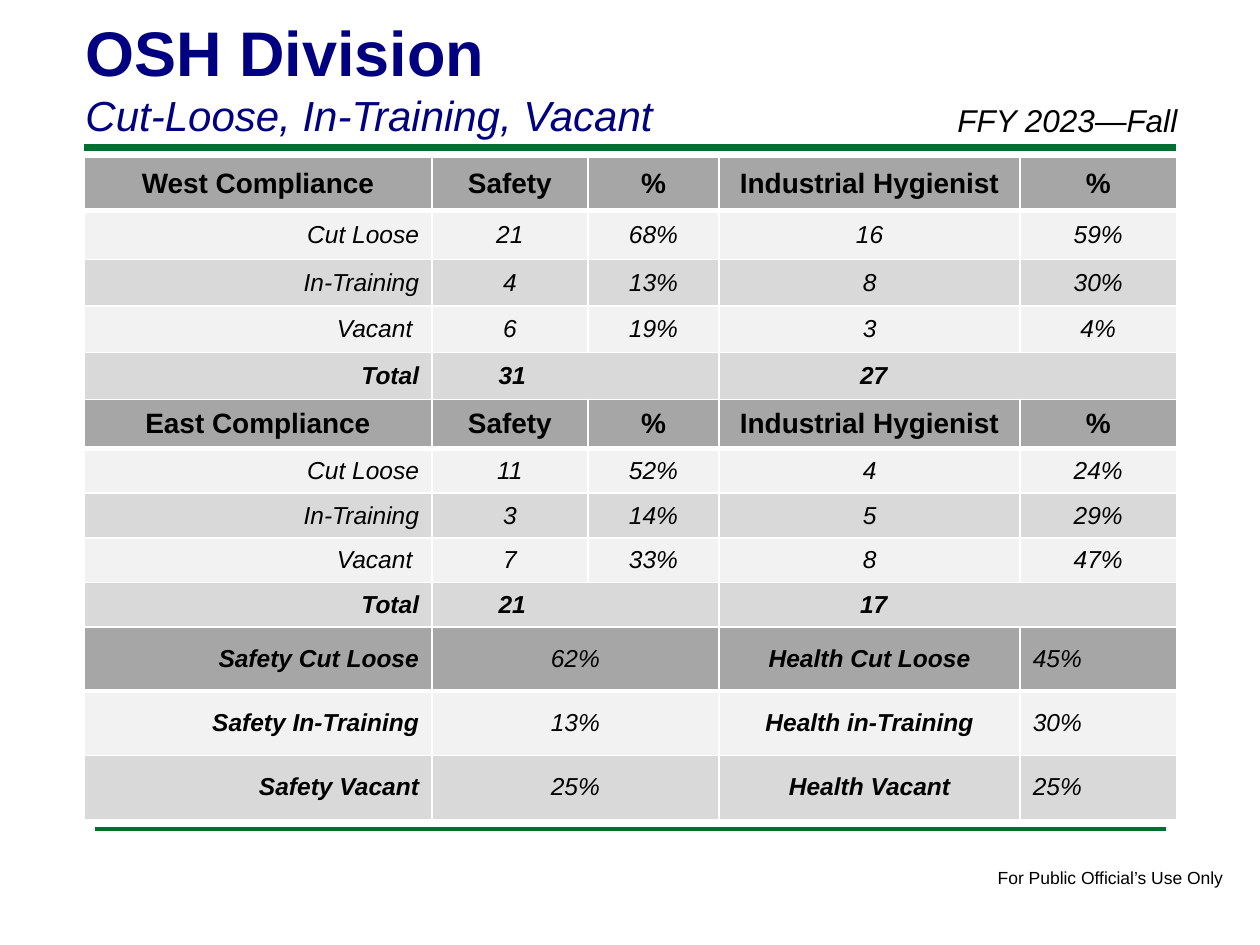
"""Build the OSH Division staffing slide with its three tables."""
import dataclasses

import pptx
import pptx.dml.color
import pptx.enum.shapes
import pptx.enum.text
import pptx.oxml
import pptx.oxml.ns
import pptx.util

ALIGN = pptx.enum.text.PP_ALIGN


@dataclasses.dataclass(frozen=True)
class Theme:
    """Colours, font and type sizes of the slide."""
    font: str = "Arial"
    navy: str = "000080"
    green: str = "007030"
    ink: str = "000000"
    border: str = "FFFFFF"
    header: str = "A6A6A6"
    bands: tuple = ("F2F2F2", "D9D9D9")
    title: int = 36
    subtitle: int = 24
    period: int = 18
    heading: int = 16
    body: int = 14
    footer: int = 10


THEME = Theme()
WIDTH = pptx.util.Inches(10)
HEIGHT = pptx.util.Inches(7.5)
LEFT = 6.67
COLUMNS = (27.6, 12.4, 10.4, 23.9, 12.4)
SUMMARY_COLUMNS = (27.6, 22.8, 23.9, 12.4)
HEADINGS = ("Safety", "%", "Industrial Hygienist", "%")
STATUSES = ("Cut Loose", "In-Training", "Vacant ")
TOTAL_INSETS = {1: 5.3, 3: 11.2}
WEST = (("21", "68%", "16", "59%"), ("4", "13%", "8", "30%"), ("6", "19%", "3", "4%"))
EAST = (("11", "52%", "4", "24%"), ("3", "14%", "5", "29%"), ("7", "33%", "8", "47%"))
SUMMARY = (
    ("Safety Cut Loose", "62%", "Health Cut Loose", "45%"),
    ("Safety In-Training", "13%", "Health in-Training", "30%"),
    ("Safety Vacant", "25%", "Health Vacant", "25%"),
)


def across(percent):
    """Return a share of the slide's width."""
    return round(WIDTH * percent / 100)


def down(percent):
    """Return a share of the slide's height."""
    return round(HEIGHT * percent / 100)


def rgb(color):
    """Return a colour object for a hex string."""
    return pptx.dml.color.RGBColor.from_string(color)


def write(p, text, size, color=THEME.ink, bold=False, italic=False, align=ALIGN.LEFT):
    """Fill a paragraph and set its font."""
    p.text = text
    p.alignment = align
    p.font.name = THEME.font
    p.font.size = pptx.util.Pt(size)
    p.font.bold = bold
    p.font.italic = italic
    p.font.color.rgb = rgb(color)


def add_rule(s, left, right, top, weight):
    """Add a horizontal green rule."""
    line = s.shapes.add_connector(pptx.enum.shapes.MSO_CONNECTOR.STRAIGHT,
                                  across(left), down(top), across(right), down(top))
    line.line.color.rgb = rgb(THEME.green)
    line.line.width = pptx.util.Pt(weight)
    line._element.spPr.append(pptx.oxml.parse_xml(
        f'<a:effectLst {pptx.oxml.ns.nsdecls("a")}/>'))


def add_text(s, left, top, width, height, wrap=True):
    """Add a text box and return its text frame."""
    sp = s.shapes.add_textbox(across(left), down(top), across(width), down(height))
    tf = sp.text_frame
    tf.word_wrap = wrap
    return tf


def add_border(cell, side, points):
    """Draw one side of a table cell's border."""
    cell._tc.get_or_add_tcPr().append(pptx.oxml.parse_xml(
        f'<a:ln{side} {pptx.oxml.ns.nsdecls("a")} w="{pptx.util.Pt(points)}">'
        f'<a:solidFill><a:srgbClr val="{THEME.border}"/></a:solidFill></a:ln{side}>'))


def add_table(s, top, columns, rows):
    """Add an empty banded table whose first row is a header."""
    frame = s.shapes.add_table(len(rows), len(columns), across(LEFT), down(top),
                               across(sum(columns)), down(sum(rows)))
    table = frame.table
    table.first_row = table.horz_banding = False
    for column, width in zip(table.columns, columns):
        column.width = across(width)
    for i, (row, height) in enumerate(zip(table.rows, rows)):
        row.height = down(height)
        for cell in row.cells:
            for side in "LRTB":
                under_header = (i, side) in ((0, "B"), (1, "T"))
                add_border(cell, side, 3 if under_header else 1)
            cell.fill.solid()
            cell.fill.fore_color.rgb = rgb(THEME.bands[(i - 1) % 2] if i else THEME.header)
            cell.vertical_anchor = pptx.enum.text.MSO_ANCHOR.MIDDLE
    return table


def add_region(s, name, top, rows, counts, totals):
    """Add the staffing table of one region."""
    table = add_table(s, top, COLUMNS, rows)
    lines = [(name, *HEADINGS)] + [(k, *v) for k, v in zip(STATUSES, counts)]
    for i, line in enumerate(lines):
        for j, text in enumerate(line):
            align = ALIGN.RIGHT if i and not j else ALIGN.CENTER
            write(table.cell(i, j).text_frame.paragraphs[0], text,
                  THEME.body if i else THEME.heading,
                  bold=not i, italic=bool(i), align=align)
    last = len(lines)
    write(table.cell(last, 0).text_frame.paragraphs[0], "Total", THEME.body,
          bold=True, italic=True, align=ALIGN.RIGHT)
    for (j, inset), total in zip(TOTAL_INSETS.items(), totals):
        cell = table.cell(last, j)
        cell.merge(table.cell(last, j + 1))
        cell.margin_left = across(inset)
        write(cell.text_frame.paragraphs[0], total, THEME.body, bold=True, italic=True)


def add_summary(s, top):
    """Add the table of combined shares."""
    table = add_table(s, top, SUMMARY_COLUMNS, (6.8,) * len(SUMMARY))
    aligns = (ALIGN.RIGHT, ALIGN.CENTER, ALIGN.CENTER, ALIGN.LEFT)
    for i, line in enumerate(SUMMARY):
        for j, (text, align) in enumerate(zip(line, aligns)):
            write(table.cell(i, j).text_frame.paragraphs[0], text, THEME.body,
                  bold=j % 2 == 0, italic=True, align=align)


def main():
    """Build and save the slide."""
    prs = pptx.Presentation()
    prs.slide_width, prs.slide_height = WIDTH, HEIGHT
    s = prs.slides.add_slide(prs.slide_layouts[6])

    add_rule(s, LEFT, 93.33, 15.6, 4)
    add_rule(s, 7.5, 92.5, 87.73, 2)
    footer = add_text(s, 78.2, 91.07, 20.1, 3.6, wrap=False)
    write(footer.paragraphs[0], "For Public Official’s Use Only", THEME.footer)
    title = add_text(s, 5.8, 0.8, 82.5, 14.8)
    write(title.paragraphs[0], "OSH Division", THEME.title, THEME.navy, bold=True)
    write(title.add_paragraph(), "Cut-Loose, In-Training, Vacant", THEME.subtitle,
          THEME.navy, italic=True)
    period = add_text(s, 75, 10, 25, 5.33)
    write(period.paragraphs[0], "FFY 2023—Fall", THEME.period, italic=True)

    add_region(s, "West Compliance", 16.67, (5.6, 5.2) + (4.93,) * 3, WEST, ("31", "27"))
    add_region(s, "East Compliance", 42.27, (5.2,) + (4.73,) * 4, EAST, ("21", "17"))
    add_summary(s, 66.33)
    prs.save("out.pptx")


if __name__ == "__main__":
    main()
